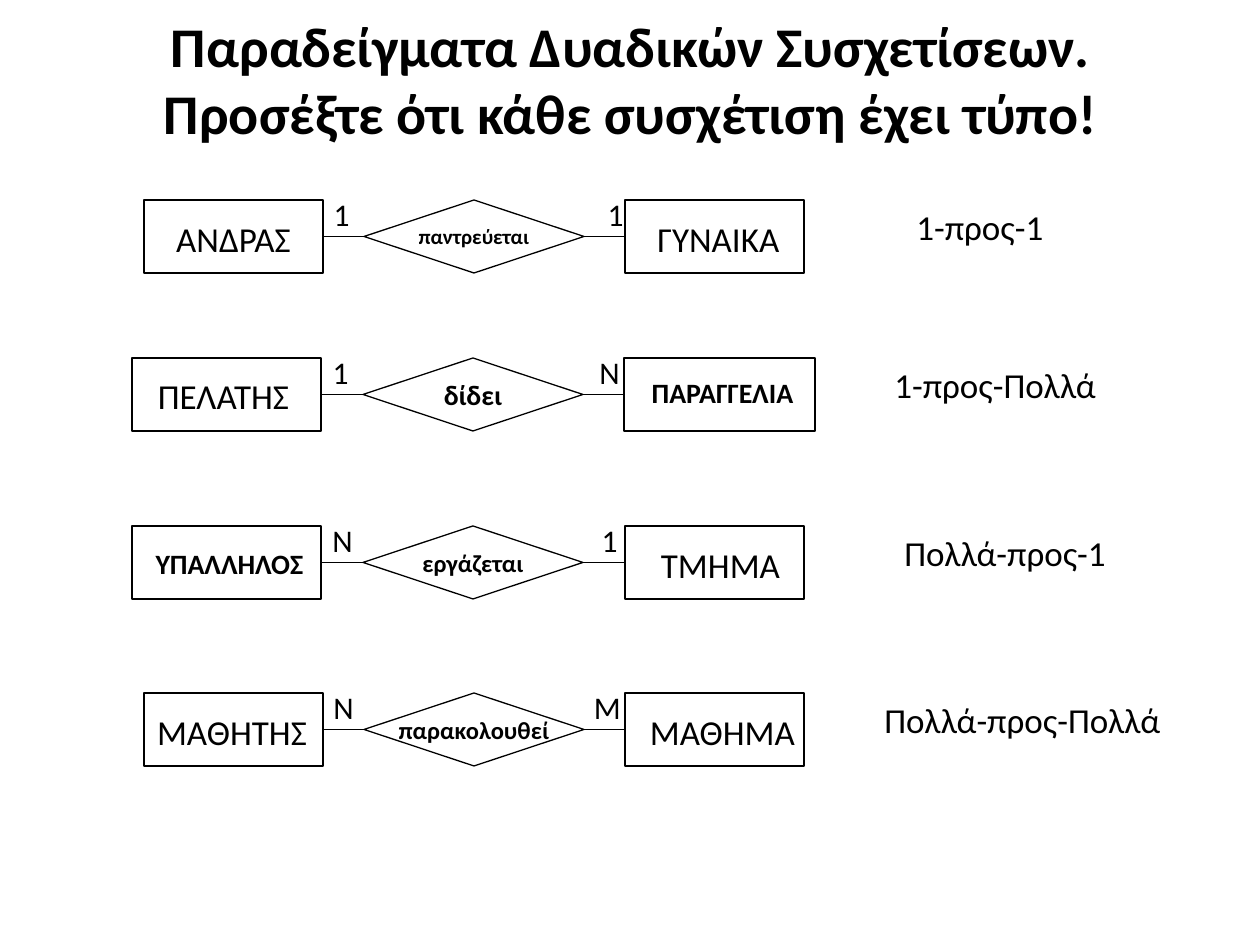
import dataclasses

import pptx
import pptx.dml.color
import pptx.enum.shapes
import pptx.enum.text
import pptx.oxml
import pptx.util

PX = 914400 // 126
FONT = "Calibri"
BLACK = "000000"
HEIGHT = 73
DIAMOND_WIDTH = 220
SHAPE = pptx.enum.shapes.MSO_SHAPE
ALIGN = pptx.enum.text.PP_ALIGN
ANCHOR = pptx.enum.text.MSO_ANCHOR


@dataclasses.dataclass
class Entity:
    """An entity rectangle and its separately placed name."""
    name: str
    x: int
    width: int
    text_x: int
    text_width: int
    text_dy: int = 11
    size: int = 20
    bold: bool = False


@dataclasses.dataclass
class Label:
    """A short text with its horizontal extent."""
    text: str
    x: int
    width: int


@dataclasses.dataclass
class Relationship:
    """One binary relationship between two entities."""
    top: int
    left: Entity
    right: Entity
    verb: str
    verb_size: int
    diamond_x: int
    left_count: Label
    right_count: Label
    kind: Label


RELATIONSHIPS = [
    Relationship(200, Entity("ΑΝΔΡΑΣ", 144, 179, 163, 141),
                 Entity("ΓΥΝΑΙΚΑ", 625, 179, 644, 149), "παντρεύεται", 12, 364,
                 Label("1", 320, 43), Label("1", 594, 43), Label("1-προς-1", 904, 179)),
    Relationship(358, Entity("ΠΕΛΑΤΗΣ", 132, 189, 126, 195, 10),
                 Entity("ΠΑΡΑΓΓΕΛΙΑ", 624, 191, 616, 213, 11, 16, True), "δίδει", 16, 363,
                 Label("1", 319, 43), Label("Ν", 586, 47), Label("1-προς-Πολλά", 882, 252)),
    Relationship(526, Entity("ΥΠΑΛΛΗΛΟΣ", 132, 189, 142, 175, 14, 16, True),
                 Entity("ΤΜΗΜΑ", 625, 179, 636, 169), "εργάζεται", 14, 363,
                 Label("Ν", 319, 47), Label("1", 588, 43), Label("Πολλά-προς-1", 892, 252)),
    Relationship(693, Entity("ΜΑΘΗΤΗΣ", 144, 179, 144, 176),
                 Entity("ΜΑΘΗΜΑ", 625, 179, 636, 173), "παρακολουθεί", 14, 364,
                 Label("Ν", 320, 47), Label("Μ", 581, 53), Label("Πολλά-προς-Πολλά", 872, 325)),
]


def color(value: str) -> pptx.dml.color.RGBColor:
    """Turn a hex string into a colour."""
    return pptx.dml.color.RGBColor.from_string(value)


def box(x: int, y: int, width: int, height: int) -> list[int]:
    """Turn px lengths into EMU."""
    return [n * PX for n in (x, y, width, height)]


def write(sp, text: str, *, size: int, bold: bool = False, align=ALIGN.CENTER,
          anchor=ANCHOR.TOP, wrap: bool = False) -> None:
    """Put formatted text into a shape."""
    tf = sp.text_frame
    tf.word_wrap = wrap
    tf.vertical_anchor = anchor
    p = tf.paragraphs[0]
    p.alignment = align
    r = p.add_run()
    r.text = text
    r.font.name = FONT
    r.font.size = pptx.util.Pt(size)
    r.font.bold = bold
    r.font.color.rgb = color(BLACK)


def add_text(s, text: str, bounds: list[int], **style) -> None:
    """Add a text box."""
    write(s.shapes.add_textbox(*bounds), text, **style)


def add_outline(s, preset, bounds: list[int]):
    """Add an unfilled shape with a thin outline."""
    sp = s.shapes.add_shape(preset, *bounds)
    sp.shadow.inherit = False
    sp.fill.background()
    sp.line.color.rgb = color(BLACK)
    sp.line.width = pptx.util.Pt(0.75)
    return sp


def add_entity(s, entity: Entity, top: int):
    """Draw an entity and return its rectangle."""
    sp = add_outline(s, SHAPE.RECTANGLE, box(entity.x, top, entity.width, HEIGHT))
    height = 55 if entity.size == 20 else 46
    add_text(s, entity.name, box(entity.text_x, top + entity.text_dy, entity.text_width, height),
             size=entity.size, bold=entity.bold)
    return sp


def join(s, left, right) -> None:
    """Connect the right side of one shape to the left side of another."""
    line = s.shapes.add_connector(pptx.enum.shapes.MSO_CONNECTOR.STRAIGHT, 0, 0, 0, 0)
    line.begin_connect(left, 3)
    line.end_connect(right, 1)
    line.line.color.rgb = color(BLACK)
    line.line.width = pptx.util.Pt(0.75)
    line._element.spPr.append(pptx.oxml.parse_xml(
        '<a:effectLst xmlns:a="http://schemas.openxmlformats.org/drawingml/2006/main"/>'))


def add_relationship(s, rel: Relationship) -> None:
    """Draw two entities, their relationship, cardinalities and type."""
    left = add_entity(s, rel.left, rel.top)
    right = add_entity(s, rel.right, rel.top)
    diamond = add_outline(s, SHAPE.DIAMOND, box(rel.diamond_x, rel.top, DIAMOND_WIDTH, HEIGHT))
    write(diamond, rel.verb, size=rel.verb_size, bold=True, anchor=ANCHOR.MIDDLE)
    for start, end in ((left, diamond), (diamond, right)):
        join(s, start, end)
    for count in (rel.left_count, rel.right_count):
        add_text(s, count.text, box(count.x, rel.top - 11, count.width, 50), size=18)
    add_text(s, rel.kind.text, box(rel.kind.x, rel.top - 1, rel.kind.width, 63),
             size=20, align=ALIGN.LEFT, wrap=True)


def main() -> None:
    """Build and save the slide."""
    prs = pptx.Presentation()
    prs.slide_width, prs.slide_height = pptx.util.Inches(10), pptx.util.Inches(7.5)
    s = prs.slides.add_slide(prs.slide_layouts[6])
    for rel in RELATIONSHIPS:
        add_relationship(s, rel)
    add_text(s, "Παραδείγματα Δυαδικών Συσχετίσεων. Προσέξτε ότι κάθε συσχέτιση έχει τύπο!",
             box(64, 16, 1134, 125), size=32, bold=True, anchor=ANCHOR.MIDDLE, wrap=True)
    prs.save("out.pptx")


if __name__ == "__main__":
    main()
